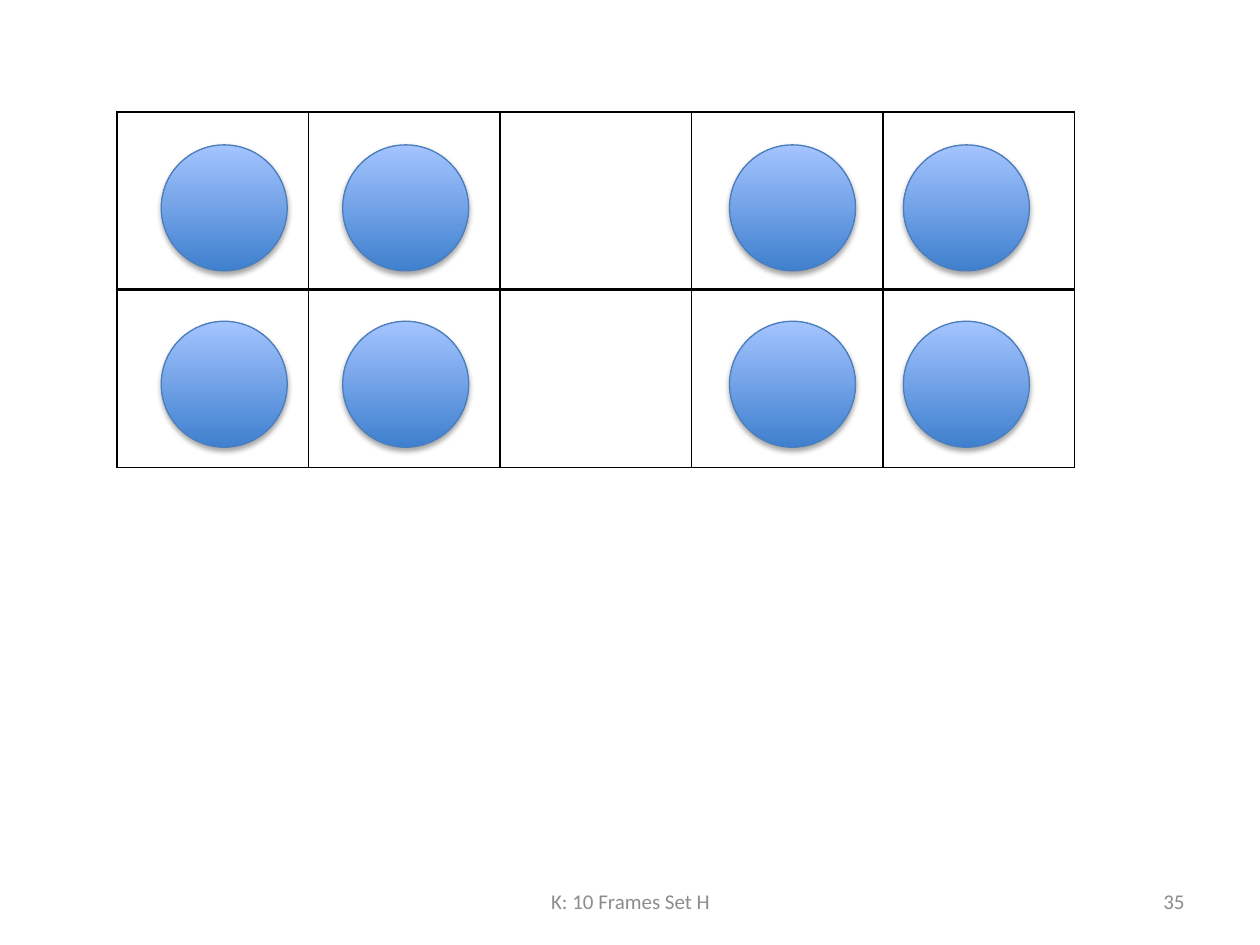
import lxml.etree
import pptx
import pptx.dml.color
import pptx.enum.shapes
import pptx.enum.text
import pptx.oxml
import pptx.oxml.ns
import pptx.util

COLORS = {
    "paper": "FFFFFF",
    "border": "000000",
    "footer": "8C8C8C",
    "counter_bottom": "3F80CE",
    "counter_top": "A4C4FF",
    "counter_line": "4B7EBC",
    "shadow": "000000",
}
SLIDE_WIDTH, SLIDE_HEIGHT = 10, 7.5
FRAME_LEFT, FRAME_TOP = 0.93, 0.89
FRAME_COLUMNS, FRAME_ROWS = 5, 2
CELL_WIDTH, CELL_HEIGHT = 1.52, 1.41
COUNTER_SIZE = 1
COUNTER_LEFTS = [1.28, 2.72, 5.79, 7.17]
COUNTER_TOPS = [1.15, 2.55]
FOOTER_TOP, FOOTER_HEIGHT = 6.95, 0.4


def color(name):
    return pptx.dml.color.RGBColor.from_string(COLORS[name])


def inches(*lengths):
    return [pptx.util.Inches(length) for length in lengths]


def set_borders(cell, widths):
    properties = cell._tc.get_or_add_tcPr()
    for position, (side, width) in enumerate(widths.items()):
        border = pptx.oxml.parse_xml(
            f'<a:ln{side} {pptx.oxml.ns.nsdecls("a")} w="{pptx.util.Pt(width)}">'
            f'<a:solidFill><a:srgbClr val="{COLORS["border"]}"/></a:solidFill>'
            f'</a:ln{side}>'
        )
        properties.insert(position, border)


def add_ten_frame(slide):
    table = slide.shapes.add_table(
        FRAME_ROWS,
        FRAME_COLUMNS,
        *inches(FRAME_LEFT, FRAME_TOP, FRAME_COLUMNS * CELL_WIDTH, FRAME_ROWS * CELL_HEIGHT),
    ).table
    table.first_row = False
    table.horz_banding = False
    for row in range(FRAME_ROWS):
        for column in range(FRAME_COLUMNS):
            cell = table.cell(row, column)
            cell.fill.solid()
            cell.fill.fore_color.rgb = color("paper")
            top, bottom = (1, 2) if row == 0 else (2, 1)
            set_borders(cell, {"L": 1, "R": 1, "T": top, "B": bottom})


def add_shadow(shape):
    shape.shadow.inherit = False
    effects = shape._element.spPr.find(pptx.oxml.ns.qn("a:effectLst"))
    shadow = lxml.etree.SubElement(
        effects,
        pptx.oxml.ns.qn("a:outerShdw"),
        blurRad=str(pptx.util.Pt(3.1)),
        dist=str(pptx.util.Pt(1.8)),
        dir="5400000",
        rotWithShape="0",
    )
    tint = lxml.etree.SubElement(shadow, pptx.oxml.ns.qn("a:srgbClr"), val=COLORS["shadow"])
    lxml.etree.SubElement(tint, pptx.oxml.ns.qn("a:alpha"), val="35000")


def add_counter(slide, left, top):
    shape = slide.shapes.add_shape(
        pptx.enum.shapes.MSO_SHAPE.OVAL, *inches(left, top, COUNTER_SIZE, COUNTER_SIZE)
    )
    shape.fill.gradient()
    shape.fill.gradient_angle = 90
    for stop, name in zip(shape.fill.gradient_stops, ["counter_bottom", "counter_top"]):
        stop.color.rgb = color(name)
    shape.line.color.rgb = color("counter_line")
    shape.line.width = pptx.util.Pt(0.75)
    add_shadow(shape)


def add_footer_text(slide, left, width, text, alignment):
    shape = slide.shapes.add_textbox(*inches(left, FOOTER_TOP, width, FOOTER_HEIGHT))
    frame = shape.text_frame
    frame.word_wrap = True
    frame.vertical_anchor = pptx.enum.text.MSO_ANCHOR.MIDDLE
    paragraph = frame.paragraphs[0]
    paragraph.alignment = alignment
    run = paragraph.add_run()
    run.text = text
    run.font.name = "Calibri"
    run.font.size = pptx.util.Pt(12)
    run.font.color.rgb = color("footer")


def main():
    presentation = pptx.Presentation()
    presentation.slide_width, presentation.slide_height = inches(SLIDE_WIDTH, SLIDE_HEIGHT)
    slide = presentation.slides.add_slide(presentation.slide_layouts[6])
    add_ten_frame(slide)
    add_footer_text(slide, 3.42, 3.17, "K: 10 Frames Set H", pptx.enum.text.PP_ALIGN.CENTER)
    add_footer_text(slide, 7.17, 2.33, "35", pptx.enum.text.PP_ALIGN.RIGHT)
    for top in COUNTER_TOPS:
        for left in COUNTER_LEFTS:
            add_counter(slide, left, top)
    presentation.save("out.pptx")


if __name__ == "__main__":
    main()
